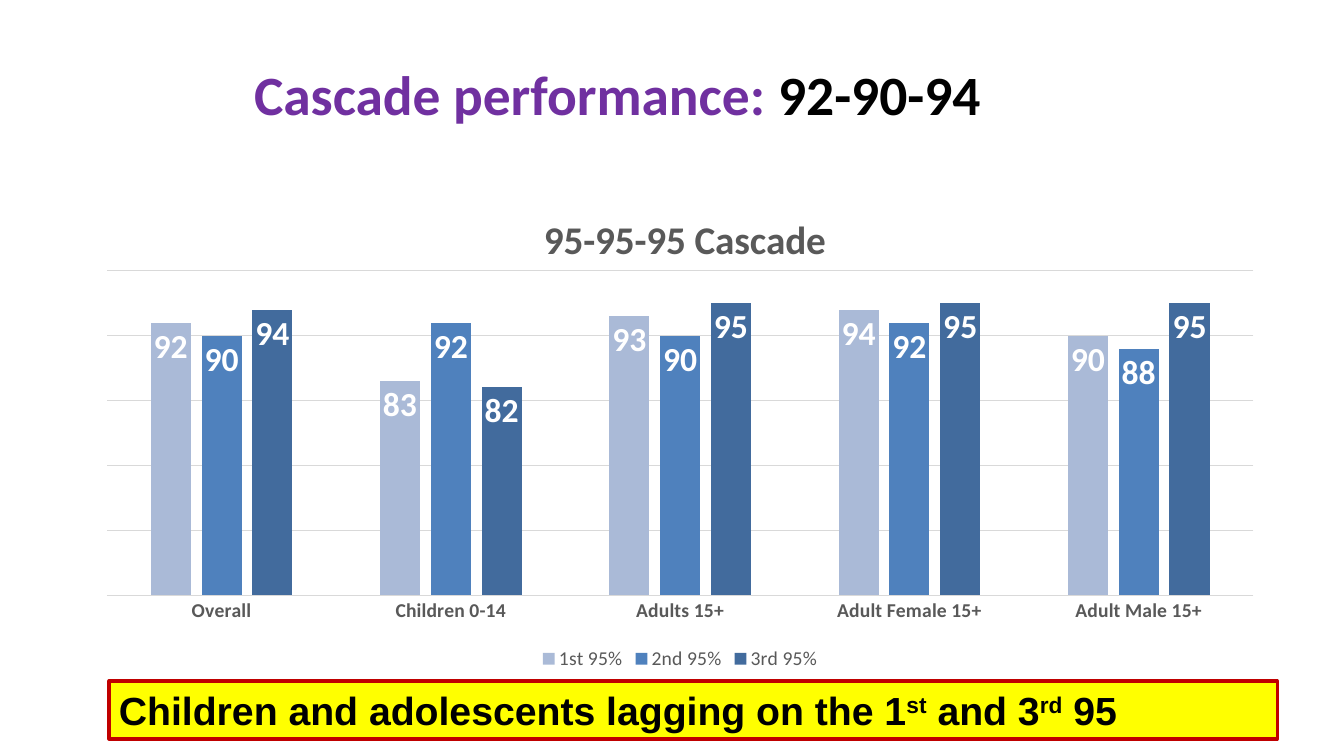
from pptx import Presentation, util as u
from pptx.chart.data import CategoryChartData
from pptx.dml.color import RGBColor
from pptx.enum import chart as ch, shapes, text
from pptx.oxml import parse_xml
from pptx.oxml.ns import nsdecls, qn

PX = 914400 / 100.8
COLOURS = {
    "black": "000000", "white": "FFFFFF", "purple": "7030A0",
    "yellow": "FFFF00", "red": "C00000", "grey": "595959", "grid": "D9D9D9",
}
CATEGORIES = ["Overall", "Children 0-14", "Adults 15+",
              "Adult Female 15+", "Adult Male 15+"]
SERIES = [
    ("1st 95%", "AABAD7", (92, 83, 93, 94, 90)),
    ("2nd 95%", "4F81BD", (90, 92, 90, 92, 88)),
    ("3rd 95%", "426B9D", (94, 82, 95, 95, 95)),
]


def rgb(colour):
    return RGBColor.from_string(COLOURS.get(colour, colour))


def set_layout(parent, index, **values):
    """Place a chart part by fractions of the chart area."""
    old = parent.find(qn("c:layout"))
    if old is not None:
        parent.remove(old)
    target = '<c:layoutTarget val="inner"/>' if "w" in values else ""
    modes = "".join(f'<c:{k}Mode val="edge"/>' for k in ("x", "y"))
    sizes = "".join(f'<c:{k} val="{v}"/>' for k, v in values.items())
    parent.insert(index, parse_xml(
        f'<c:layout {nsdecls("c")}><c:manualLayout>{target}{modes}{sizes}'
        "</c:manualLayout></c:layout>"))


class Deck:
    def __init__(self, prs):
        self.s = prs.slides.add_slide(prs.slide_layouts[5])

    def box(self, *lengths):
        return [u.Emu(round(n * PX)) for n in lengths]

    def font(self, font, size, colour, bold=True, name="Calibri"):
        font.size, font.bold, font.name = u.Pt(size), bold, name
        font.color.rgb = rgb(colour)

    def title(self, at, parts):
        sp = self.s.shapes.title
        sp.left, sp.top, sp.width, sp.height = self.box(*at)
        sp.text_frame.vertical_anchor = text.MSO_ANCHOR.MIDDLE
        p = sp.text_frame.paragraphs[0]
        p.alignment = text.PP_ALIGN.CENTER
        self.font(p.font, 39.6, "black")
        for words, colour in parts:
            r = p.add_run()
            r.text = words
            r.font.color.rgb = rgb(colour)

    def banner(self, at, parts):
        """Add a filled message bar; parts pair words with a superscript flag."""
        sp = self.s.shapes.add_shape(shapes.MSO_SHAPE.RECTANGLE, *self.box(*at))
        sp.shadow.inherit = False
        sp.fill.solid()
        sp.fill.fore_color.rgb = rgb("yellow")
        sp.line.color.rgb = rgb("red")
        sp.line.width = u.Pt(2.25)
        tf = sp.text_frame
        tf.word_wrap = True
        tf.vertical_anchor = text.MSO_ANCHOR.TOP
        p = tf.paragraphs[0]
        p.alignment = text.PP_ALIGN.LEFT
        self.font(p.font, 28, "black", name="Arial")
        for words, raised in parts:
            r = p.add_run()
            r.text = words
            if raised:
                r.font._element.set("baseline", "30000")

    def column_chart(self, at, heading):
        data = CategoryChartData()
        data.categories = CATEGORIES
        for name, _, values in SERIES:
            data.add_series(name, values)
        chart = self.s.shapes.add_chart(
            ch.XL_CHART_TYPE.COLUMN_CLUSTERED, *self.box(*at), data).chart
        self.font(chart.font, 10, "black", bold=False)

        chart.has_title = True
        p = chart.chart_title.text_frame.paragraphs[0]
        p.text = heading
        self.font(p.font, 28, "grey")
        chart.chart_title.include_in_layout = False
        set_layout(chart.chart_title._element, 1, x=0.38, y=0.06)

        chart.has_legend = True
        chart.legend.position = ch.XL_LEGEND_POSITION.BOTTOM
        chart.legend.include_in_layout = False
        self.font(chart.legend.font, 14, "grey", bold=False)
        self.axes(chart)
        self.columns(chart.plots[0])
        plot_area = chart._chartSpace.chart.plotArea
        set_layout(plot_area, 0, x=0.02, y=0.19, w=0.96, h=0.65)

    def axes(self, chart):
        cat, val = chart.category_axis, chart.value_axis
        cat.major_tick_mark = ch.XL_TICK_MARK.NONE
        self.font(cat.tick_labels.font, 14, "grey")
        val.visible = False
        val.minimum_scale, val.maximum_scale, val.major_unit = 50, 100, 10
        val.has_major_gridlines = True
        for line in (cat.format.line, val.major_gridlines.format.line):
            line.color.rgb = rgb("grid")
            line.width = u.Pt(0.75)

    def columns(self, plot):
        plot.gap_width, plot.overlap = 219, -27
        plot.vary_by_categories = False
        for series, (_, colour, _) in zip(plot.series, SERIES):
            series.format.fill.solid()
            series.format.fill.fore_color.rgb = rgb(colour)
            labels = series.data_labels
            labels.show_value = True
            labels.position = ch.XL_LABEL_POSITION.INSIDE_END
            self.font(labels.font, 24, "white")


def main():
    prs = Presentation()
    prs.slide_width, prs.slide_height = u.Inches(13.33), u.Inches(7.5)
    deck = Deck(prs)
    deck.title((97, 30, 1053, 126),
               [("Cascade performance: ", "purple"), ("92-90-94 ", "black")])
    deck.banner((109, 681, 1168, 58), [
        ("Children and adolescents lagging on the 1", False), ("st", True),
        (" and 3", False), ("rd", True), (" 95", False)])
    deck.column_chart((83, 176, 1194, 499), "95-95-95 Cascade")
    prs.save("out.pptx")


if __name__ == "__main__":
    main()
